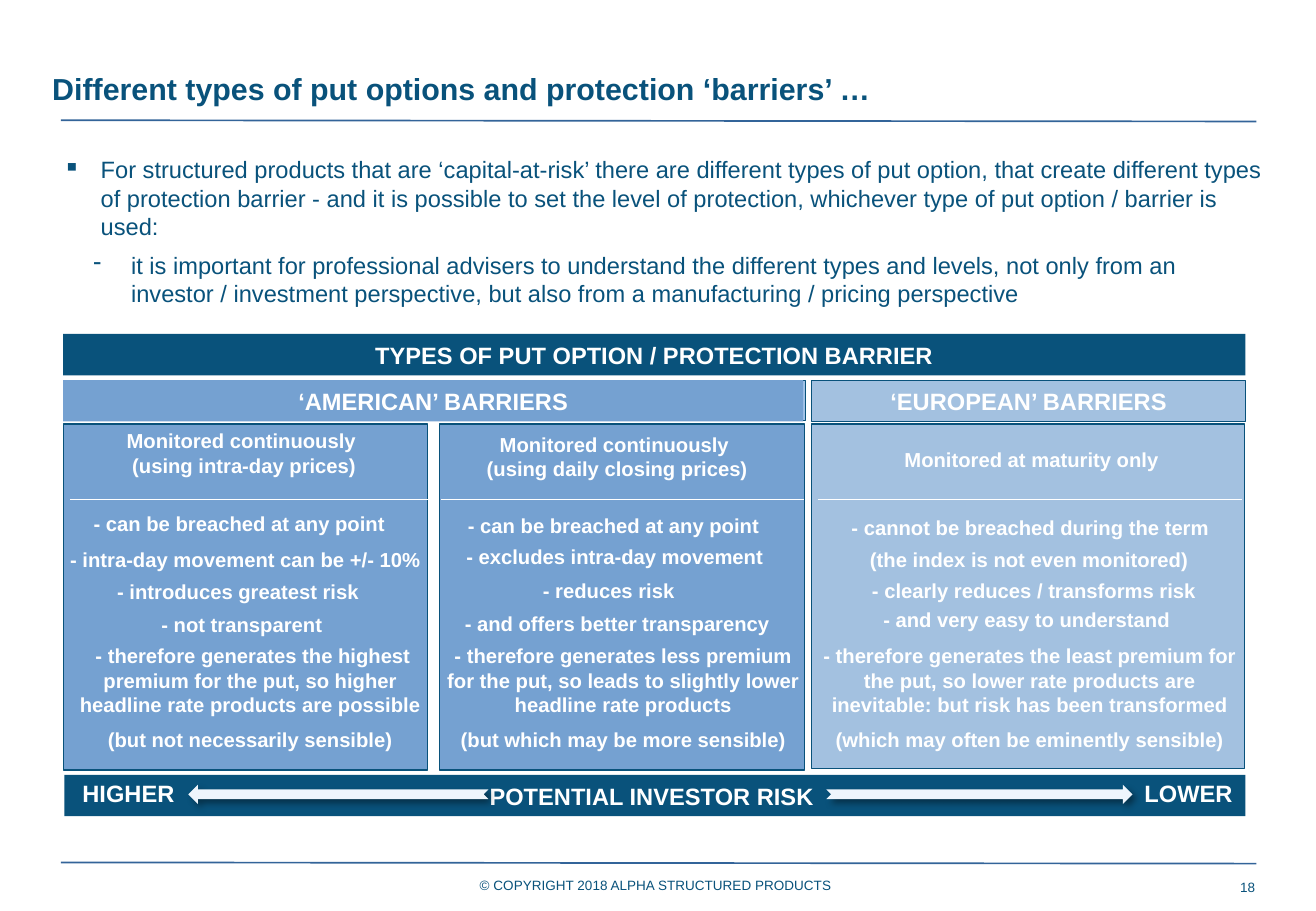
from lxml.etree import SubElement
from pptx import Presentation
from pptx.dml.color import RGBColor
from pptx.enum.shapes import MSO_CONNECTOR, MSO_SHAPE
from pptx.enum.text import MSO_ANCHOR, PP_ALIGN
from pptx.oxml.ns import qn
from pptx.util import Inches, Pt

NAVY, RULE, WHITE = "09527B", "336499", "FFFFFF"
BLUE, PALE, LIGHT, ARROW = "75A1D1", "A3C1E0", "A4C4E8", "EEF5FC"
LEFT, CENTER, RIGHT = PP_ALIGN.LEFT, PP_ALIGN.CENTER, PP_ALIGN.RIGHT


def color(hex_value):
    return RGBColor.from_string(hex_value)


class SlideBuilder:
    font_name = "Arial"

    def __init__(self, slide):
        self.slide = slide

    def fill_text(self, frame, paragraphs, size, ink, bold=False, align=LEFT, gap=0, after=0,
                  inset=0.1, pad=0.05, wrap=True, anchor=MSO_ANCHOR.TOP, bullets=()):
        frame.word_wrap = wrap
        frame.vertical_anchor = anchor
        frame.margin_left = frame.margin_right = Inches(inset)
        frame.margin_top = frame.margin_bottom = Inches(pad)
        for index, words in enumerate(paragraphs):
            paragraph = frame.add_paragraph() if index else frame.paragraphs[0]
            paragraph.text = words
            paragraph.alignment = align
            paragraph.space_before = Pt(gap if index else 0)
            paragraph.space_after = Pt(after)
            if bullets:
                mark, indent = bullets[index]
                paragraph.level = index
                props = paragraph._p.get_or_add_pPr()
                props.set("marL", str(Inches(indent)))
                props.set("indent", str(Inches(-0.31)))
                SubElement(props, qn("a:buChar")).set("char", mark)
            for run in paragraph.runs:
                run.font.name = self.font_name
                run.font.size = Pt(size)
                run.font.bold = bold
                run.font.color.rgb = color(ink)

    def title(self, words, box):
        title = self.slide.shapes.title
        title.left, title.top, title.width, title.height = map(Inches, box)
        self.fill_text(title.text_frame, [words], 18, NAVY, bold=True)

    def text(self, paragraphs, box, size, ink, **style):
        area = self.slide.shapes.add_textbox(*map(Inches, box))
        self.fill_text(area.text_frame, paragraphs, size, ink, **style)

    def shape(self, kind, box, fill, outline=None):
        shape = self.slide.shapes.add_shape(kind, *map(Inches, box))
        shape.shadow.inherit = False
        shape.fill.solid()
        shape.fill.fore_color.rgb = color(fill)
        if outline:
            shape.line.color.rgb = color(outline)
            shape.line.width = Pt(0.75)
        else:
            shape.line.fill.background()
        return shape

    def band(self, words, box, fill, outline=None):
        bar = self.shape(MSO_SHAPE.RECTANGLE, box, fill, outline)
        self.fill_text(bar.text_frame, [words], 14, WHITE, bold=True, align=CENTER,
                       anchor=MSO_ANCHOR.MIDDLE)

    def line(self, start, end, ink, width):
        line = self.slide.shapes.add_connector(MSO_CONNECTOR.STRAIGHT,
                                               *map(Inches, start + end))
        line.line.color.rgb = color(ink)
        line.line.width = Pt(width)
        SubElement(line._element.spPr, qn("a:effectLst"))

    def arrow(self, box, flipped=False):
        arrow = self.shape(MSO_SHAPE.NOTCHED_RIGHT_ARROW, box, ARROW)
        props = arrow._element.spPr
        if flipped:
            props.find(qn("a:xfrm")).set("flipH", "1")
        shadow = SubElement(props.find(qn("a:effectLst")), qn("a:outerShdw"),
                            blurRad=str(Pt(4)), dist=str(Pt(3)), dir="2700000",
                            algn="tl", rotWithShape="0")
        tint = SubElement(shadow, qn("a:srgbClr"), val="000000")
        SubElement(tint, qn("a:alpha"), val="40000")

    def column(self, panel, fill, heading, heading_box, points, outcome, outcome_box, divider):
        self.shape(MSO_SHAPE.RECTANGLE, panel, fill, NAVY)
        label = dict(size=12, ink=WHITE, bold=True, align=CENTER)
        self.text([heading], heading_box, **label)
        for point, left, top in points:
            self.text([point], (left, top, panel[2], 0.3), inset=0, **label)
        self.text(outcome, outcome_box, inset=0, gap=6.5, **label)
        self.line((divider[0], 4.11), (divider[1], 4.11), WHITE, 0.75)


COLUMNS = [
    dict(panel=(0.52, 3.49, 3, 2.85), fill=BLUE,
         heading="Monitored continuously \n(using intra-day prices)",
         heading_box=(0.51, 3.48, 3, 0.5),
         points=[("- can be breached at any point", 0.47, 4.16),
                 ("- intra-day movement can be +/- 10%", 0.52, 4.46),
                 ("- introduces greatest risk", 0.46, 4.72),
                 ("- not transparent", 0.49, 4.99)],
         outcome=[" - therefore generates the highest premium for the put, so higher "
                  "headline rate products are possible",
                  "(but not necessarily sensible)"],
         outcome_box=(0.56, 5.25, 3, 1.01), divider=(0.58, 3.52)),
    dict(panel=(3.62, 3.49, 3, 2.85), fill=BLUE,
         heading="Monitored continuously \n(using daily closing prices)",
         heading_box=(3.58, 3.51, 3, 0.5),
         points=[("- can be breached at any point", 3.55, 4.18),
                 ("- excludes intra-day movement", 3.56, 4.43),
                 ("- reduces risk", 3.51, 4.71),
                 ("- and offers better transparency", 3.58, 4.98)],
         outcome=["- therefore generates less premium for the put, so leads to slightly "
                  "lower headline rate products",
                  "(but which may be more sensible)"],
         outcome_box=(3.63, 5.25, 3, 1.01), divider=(3.63, 6.62)),
    dict(panel=(6.68, 3.49, 3.56, 2.84), fill=PALE,
         heading="Monitored at maturity only",
         heading_box=(6.71, 3.63, 3.56, 0.3),
         points=[("- cannot be breached during the term", 6.7, 4.19),
                 ("(the index is not even monitored)", 6.69, 4.46),
                 ("- clearly reduces / transforms risk", 6.73, 4.71),
                 ("- and very easy to understand", 6.67, 4.95)],
         outcome=["- therefore generates the least premium for the put, so lower rate "
                  "products are inevitable: but risk has been transformed",
                  "(which may often be eminently sensible)"],
         outcome_box=(6.73, 5.25, 3.49, 1.01), divider=(6.73, 10.22)),
]

INTRO = [
    "For structured products that are ‘capital-at-risk’ there are different types of put option, "
    "that create different types of protection barrier - and it is possible to set the level of "
    "protection, whichever type of put option / barrier is used:",
    "it is important for professional advisers to understand the different types and levels, not "
    "only from an investor / investment perspective, but also from a manufacturing / pricing "
    "perspective",
]


def main():
    deck = Presentation()
    deck.slide_width, deck.slide_height = Inches(10.83), Inches(7.5)
    page = SlideBuilder(deck.slides.add_slide(deck.slide_layouts[5]))

    for top in (7.1, 0.99):
        page.line((0.5, top), (10.34, top + 0.01), RULE, 1)
    page.text(["18"], (9.65, 7.22, 0.68, 0.16), 8, NAVY, align=RIGHT, inset=0, pad=0,
              anchor=MSO_ANCHOR.MIDDLE)
    page.title("Different types of put options and protection ‘barriers’ …",
               (0.33, 0.53, 7.35, 0.4))
    page.text(INTRO, (0.42, 1.23, 10.19, 1.13), 14, NAVY, after=6,
              bullets=[("▪", 0.31), ("-", 0.56)])

    page.band("TYPES OF PUT OPTION / PROTECTION BARRIER", (0.52, 2.75, 9.73, 0.34), NAVY)
    for column in COLUMNS:
        page.column(**column)
    page.shape(MSO_SHAPE.RECTANGLE, (0.53, 3.13, 6.1, 0.33), LIGHT, NAVY)
    page.band("‘AMERICAN’ BARRIERS", (0.52, 3.13, 6.09, 0.34), BLUE)
    page.band("‘EUROPEAN’ BARRIERS", (6.68, 3.13, 3.57, 0.34), PALE, NAVY)

    page.band("POTENTIAL INVESTOR RISK ", (0.53, 6.38, 9.72, 0.34), NAVY)
    page.arrow((6.8, 6.46, 2.52, 0.16))
    page.arrow((1.55, 6.46, 2.47, 0.16), flipped=True)
    for words, left, width in (("HIGHER", 0.58, 0.97), ("LOWER", 9.32, 0.93)):
        page.text([words], (left, 6.36, width, 0.34), 14, WHITE, bold=True, wrap=False)
    page.text(["© COPYRIGHT 2018 ALPHA STRUCTURED PRODUCTS"], (3.85, 7.17, 3.13, 0.24), 8, NAVY,
              wrap=False)
    deck.save("out.pptx")


if __name__ == "__main__":
    main()
